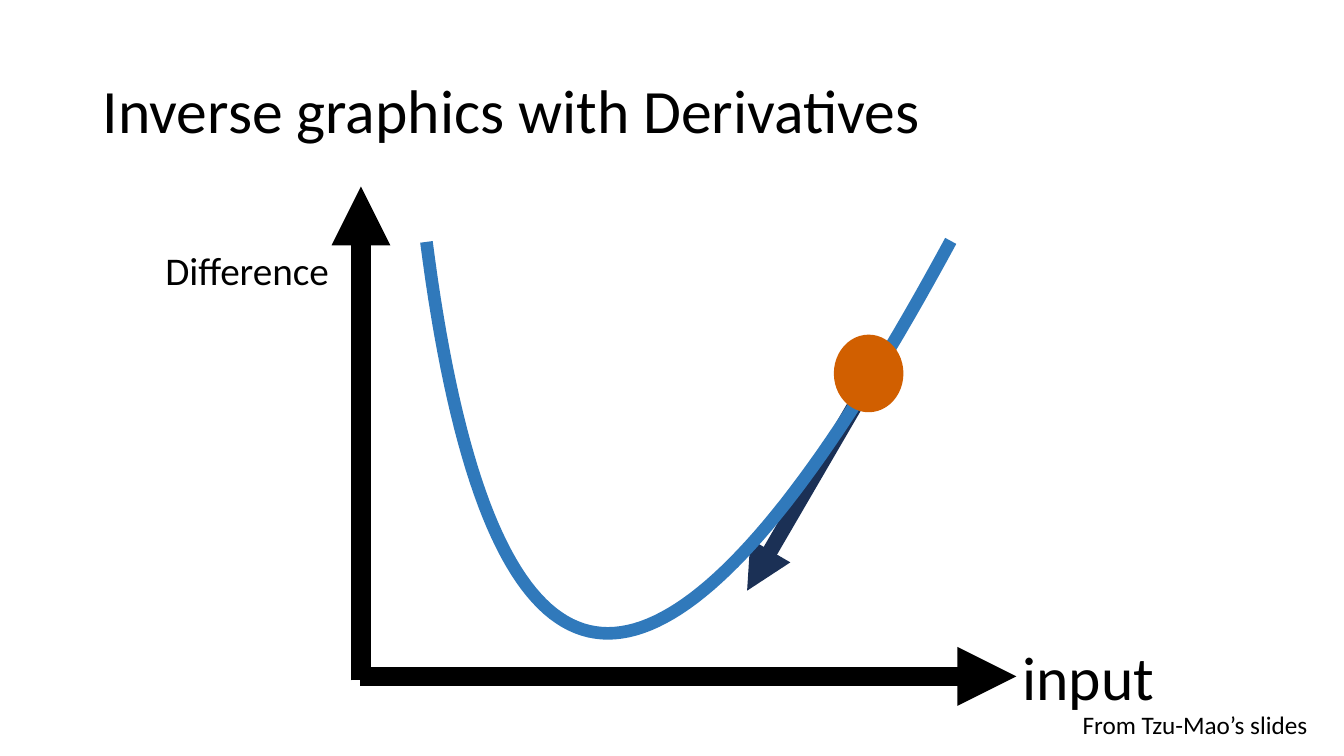
from lxml.etree import SubElement
from pptx import Presentation
from pptx.dml.color import RGBColor
from pptx.enum.shapes import MSO_CONNECTOR, MSO_SHAPE
from pptx.enum.text import MSO_ANCHOR, PP_ALIGN
from pptx.oxml.ns import qn
from pptx.util import Inches, Pt

BLACK, NAVY, BLUE, ORANGE = "000000", "1B3055", "3079BB", "D15F00"
CURVE_STEPS = 80


def paint(color_format, color):
    """Set a colour format from a hex string."""
    color_format.rgb = RGBColor.from_string(color)


def style_line(line, color, width):
    """Set the colour and the width in points of a line."""
    paint(line.color, color)
    line.width = Pt(width)


def fill_text(frame, text, size, inset=0.1, anchor=MSO_ANCHOR.MIDDLE, wrap=True):
    """Write one left-aligned paragraph into a text frame."""
    frame.word_wrap = wrap
    frame.vertical_anchor = anchor
    frame.margin_left = frame.margin_right = Inches(inset)
    frame.margin_top = frame.margin_bottom = Inches(0.05)
    paragraph = frame.paragraphs[0]
    paragraph.text = text
    paragraph.alignment = PP_ALIGN.LEFT
    paragraph.font.size = Pt(size)
    paragraph.font.name = "Calibri"
    paint(paragraph.font.color, BLACK)
    return paragraph


def add_title(slide, text, box):
    """Move and format the title placeholder."""
    title = slide.shapes.title
    title.left, title.top, title.width, title.height = map(Inches, box)
    fill_text(title.text_frame, text, 44).line_spacing = 0.9


def add_label(slide, text, box, size, **layout):
    """Add a text box."""
    label = slide.shapes.add_textbox(*map(Inches, box))
    fill_text(label.text_frame, text, size, **layout)


def add_arrow(slide, start, end, color, width):
    """Add a straight arrow with a triangular head at its end."""
    arrow = slide.shapes.add_connector(
        MSO_CONNECTOR.STRAIGHT, *map(Inches, start + end))
    style_line(arrow.line, color, width)
    SubElement(arrow.line._get_or_add_ln(), qn("a:tailEnd"), type="triangle")
    SubElement(arrow._element.spPr, qn("a:effectLst"))


def bezier_point(controls, t):
    """Return the point of a cubic Bezier curve at parameter t."""
    weights = ((1 - t) ** 3, 3 * t * (1 - t) ** 2, 3 * t ** 2 * (1 - t), t ** 3)
    return tuple(
        Inches(sum(w * value for w, value in zip(weights, axis)))
        for axis in zip(*controls))


def add_curve(slide, controls, color, width):
    """Draw a cubic Bezier curve as an open outline."""
    points = [bezier_point(controls, i / CURVE_STEPS) for i in range(CURVE_STEPS + 1)]
    builder = slide.shapes.build_freeform(*points[0])
    builder.add_line_segments(points[1:], close=False)
    curve = builder.convert_to_shape()
    curve.shadow.inherit = False
    curve.fill.background()
    style_line(curve.line, color, width)


def add_dot(slide, box, color):
    """Add a filled ellipse without an outline."""
    dot = slide.shapes.add_shape(MSO_SHAPE.OVAL, *map(Inches, box))
    dot.shadow.inherit = False
    dot.fill.solid()
    paint(dot.fill.fore_color, color)
    dot.line.fill.background()


def main():
    """Build the slide and save it."""
    presentation = Presentation()
    presentation.slide_width = Inches(13.33)
    presentation.slide_height = Inches(7.5)
    slide = presentation.slides.add_slide(presentation.slide_layouts[5])

    add_title(slide, "Inverse graphics with Derivatives", (0.92, 0.4, 11.5, 1.45))
    add_arrow(slide, (3.57, 6.71), (10.08, 6.71), BLACK, 14)
    add_label(slide, "input", (10.09, 6.28, 1.43, 0.85), 44, inset=0.05, wrap=False)
    add_label(slide, "Difference", (1.59, 2.39, 1.75, 0.58), 28, inset=0.05)
    add_arrow(slide, (8.58, 3.85), (7.41, 5.86), NAVY, 11)
    add_arrow(slide, (3.58, 6.75), (3.58, 1.85), BLACK, 14)
    add_curve(slide, ((9.43, 2.39), (6.63, 7.58), (4.9, 7.58), (4.23, 2.4)), BLUE, 9)
    add_dot(slide, (8.27, 3.32, 0.69, 0.77), ORANGE)
    add_label(slide, "From Tzu-Mao’s slides", (10.64, 6.99, 2.57, 0.4), 18,
              anchor=MSO_ANCHOR.TOP)
    presentation.save("out.pptx")


if __name__ == "__main__":
    main()
